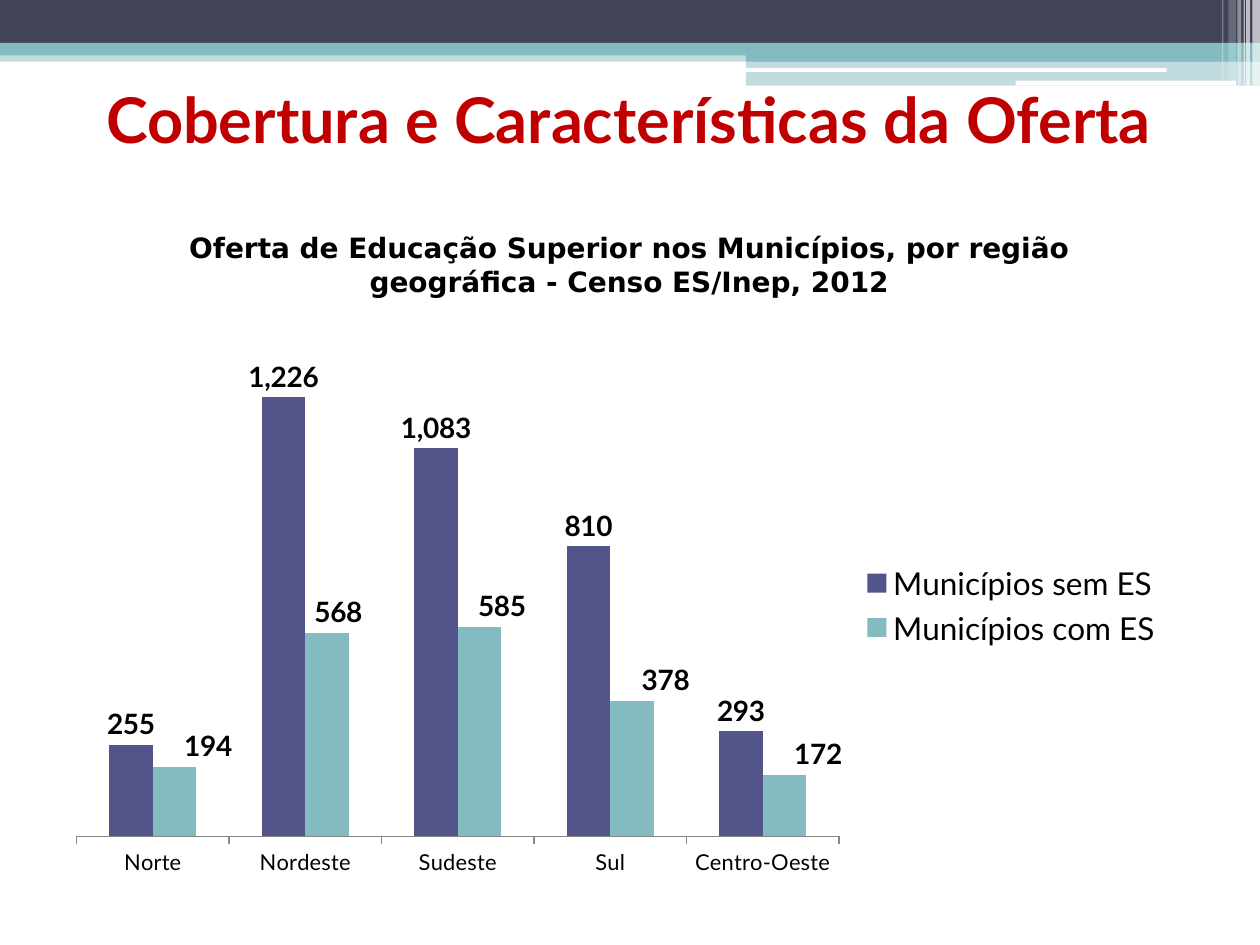
from lxml.etree import SubElement
from pptx import Presentation
from pptx.chart.data import CategoryChartData as ChartData
from pptx.dml.color import RGBColor as Rgb
from pptx.enum.chart import XL_CHART_TYPE as Kind
from pptx.enum.chart import XL_LABEL_POSITION as Spot
from pptx.enum.chart import XL_LEGEND_POSITION as Side
from pptx.enum.chart import XL_TICK_LABEL_POSITION as Tick
from pptx.enum.shapes import MSO_SHAPE as Shape
from pptx.enum.text import MSO_ANCHOR as Anchor
from pptx.enum.text import PP_ALIGN as Align
from pptx.oxml import parse_xml
from pptx.oxml.ns import nsdecls, qn
from pptx.util import Inches, Pt

COLS, ROWS = 100, 75  # grid of the slide
UNIT = Inches(10) / COLS
HUES = {
    "dark": "424456", "teal": "83BBC1", "blue": "53548A", "red": "C00000",
    "white": "FFFFFF", "black": "000000", "gray": "868686",
}
FONT = "Lato"


def hue(name):
    return Rgb.from_string(HUES[name])


def grid(*cells):
    return [round(cell * UNIT) for cell in cells]


def style(font, size, bold=False, color="black", face=FONT):
    font.name, font.size, font.bold = face, Pt(size), bold
    font.color.rgb = hue(color)


def add_text(slide, box, text, anchor=Anchor.TOP, space=1.0, **look):
    frame = slide.shapes.add_textbox(*grid(*box)).text_frame
    frame.word_wrap, frame.vertical_anchor = True, anchor
    par = frame.paragraphs[0]
    par.alignment, par.line_spacing = Align.CENTER, space
    run = par.add_run()
    run.text = text
    style(run.font, **look)


def add_bar(slide, box, color, alpha=100, kind=Shape.RECTANGLE):
    bar = slide.shapes.add_shape(kind, *grid(*box))
    bar.shadow.inherit = False
    bar.fill.solid()
    bar.fill.fore_color.rgb = hue(color)
    bar.line.fill.background()
    if alpha < 100:
        tint = bar.fill._xPr.find(".//" + qn("a:srgbClr"))
        SubElement(tint, qn("a:alpha"), val=str(alpha * 1000))


def add_head(slide, box):
    """Bands across the top, with a tab and fine stripes at the right."""
    left, top, width, height = box
    right, tab = left + width, 40.8
    for y, tall, color, alpha in (
        (4, 0.9, "teal", 50), (0, 3.4, "dark", 100), (3.4, 1, "teal", 100),
    ):
        add_bar(slide, (left, top + y, width, tall), color, alpha)
    for y, tall, alpha in ((3.9, 1, 100), (4.8, 2, 50)):
        add_bar(slide, (right - tab, top + y, tab, tall), "teal", alpha)
    for x, y, wide, tall in ((40.9, 5.4, 33.5, 0.3), (19.4, 6.4, 17.5, 0.4)):
        add_bar(slide, (right - x, top + y, wide, tall), "white",
                kind=Shape.ROUNDED_RECTANGLE)
    for x, wide, cut, alpha in (
        (0.6, 0.6, 0, 65), (1.1, 0.3, 0, 65), (1.3, 0.1, 0, 60),
        (1.8, 0.3, 0, 40), (2.5, 0.6, 0.4, 20), (3, 0.1, 0.4, 30),
    ):
        add_bar(slide, (right - x, top, wide, height - cut), "white", alpha)


def layout(target=False, **parts):
    """Manual chart layout, in shares of the chart."""
    inner = '<c:layoutTarget val="inner"/>' if target else ""
    modes = '<c:xMode val="edge"/><c:yMode val="edge"/>' if target else ""
    sizes = "".join(f'<c:{key} val="{val}"/>' for key, val in parts.items())
    return parse_xml(f"<c:layout {nsdecls('c')}><c:manualLayout>{inner}{modes}"
                     f"{sizes}</c:manualLayout></c:layout>")


def add_columns(slide, box):
    data = ChartData(number_format="#,##0")
    data.categories = ["Norte", "Nordeste", "Sudeste", "Sul", "Centro-Oeste"]
    data.add_series("Municípios sem ES", (255, 1226, 1083, 810, 293))
    data.add_series("Municípios com ES", (194, 568, 585, 378, 172))
    chart = slide.shapes.add_chart(
        Kind.COLUMN_CLUSTERED, *grid(*box), data).chart
    chart.has_title = False
    style(chart.font, 12.5)

    chart.has_legend = True
    chart.legend.position = Side.RIGHT
    chart.legend.include_in_layout = False
    style(chart.legend.font, 18)

    scale = chart.value_axis
    scale.minimum_scale, scale.maximum_scale = 0, 1400
    scale.has_major_gridlines = scale.visible = False
    names = chart.category_axis
    names.tick_label_position = Tick.LOW
    names.format.line.color.rgb = hue("gray")

    plot = chart.plots[0]
    plot.gap_width, plot.overlap, plot.vary_by_categories = 150, 0, False
    for series, color in zip(plot.series, ("blue", "teal")):
        series.format.fill.solid()
        series.format.fill.fore_color.rgb = hue(color)
        labels = series.data_labels
        labels.show_value, labels.position = True, Spot.OUTSIDE_END
        labels.number_format = "#,##0"
        labels.number_format_is_linked = False
        style(labels.font, 16, bold=True)

    shifts = (0.025, 0.015, 0.022, 0.03, 0.028)
    for i, shift in enumerate(shifts):
        label = plot.series[1].points[i].data_label
        style(label.font, 16, bold=True)
        label.position = Spot.OUTSIDE_END
        mark = label._dLbl
        mark.insert(1, layout(x=round(shift, 2), y=0))

    area = chart._chartSpace.chart.plotArea
    for old in area.findall(qn("c:layout")):
        area.remove(old)
    area.insert(0, layout(True, x=0.02, y=0.02, w=0.68, h=0.89))


def build():
    deck = Presentation()
    deck.slide_width, deck.slide_height = grid(COLS, ROWS)
    slide = deck.slides.add_slide(deck.slide_layouts[6])
    add_head(slide, (0, 0, COLS, 6.8))
    add_text(slide, (10.6, 17.8, 78.7, 7.1),
             "Oferta de Educação Superior nos Municípios, por região "
             "geográfica - Censo ES/Inep, 2012",
             size=16, bold=True, face="DejaVu Sans")
    add_columns(slide, (4.3, 25.7, 89, 44.7))
    add_text(slide, (4.3, 6.8, 91.2, 6.3),
             "Cobertura e Características da Oferta",
             anchor=Anchor.MIDDLE, space=0.8, size=36, bold=True, color="red")
    deck.save("out.pptx")


if __name__ == "__main__":
    build()
